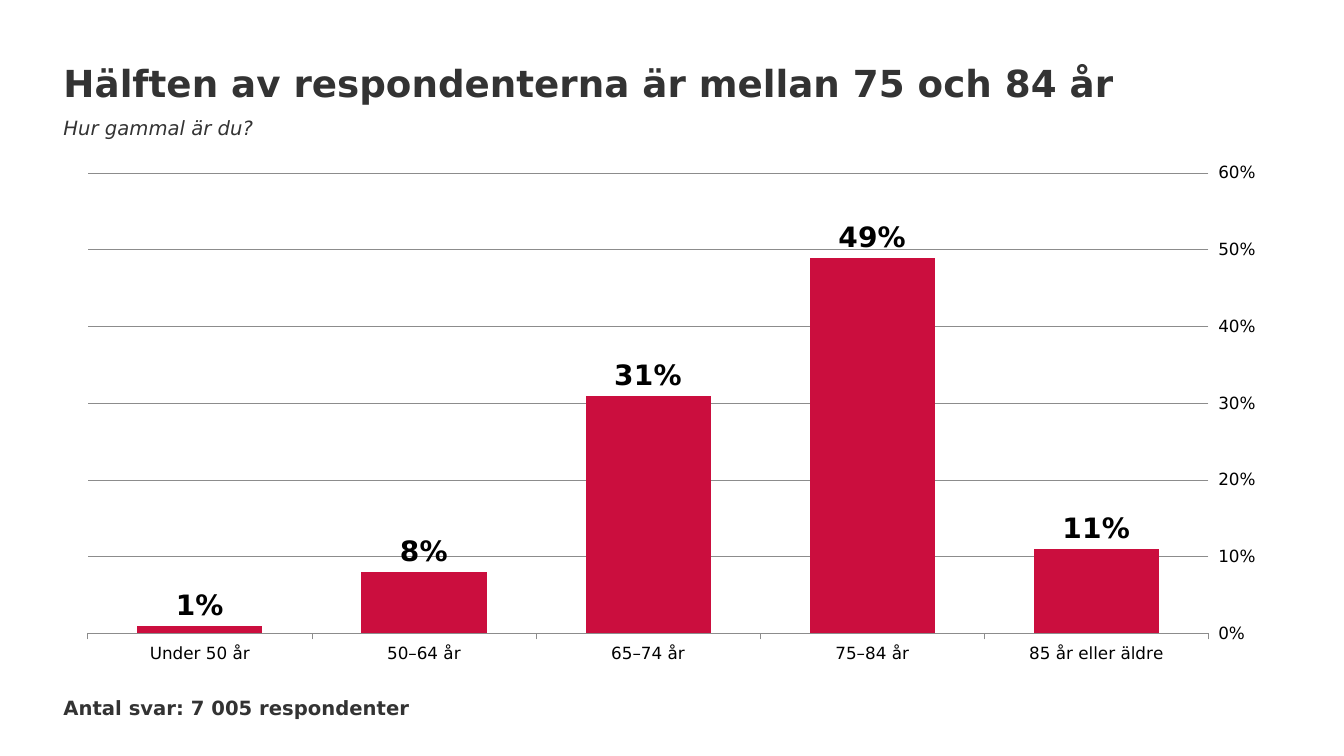
from pptx import Presentation
from pptx import util as u
from pptx.chart import data as cd
from pptx.dml import color as col
from pptx.enum import chart as ch, text as tx

FONT = "DejaVu Sans"
INK, BLACK, GREY, RED = "333333", "000000", "8C8C8C", "CB0E3E"
LEFT, WIDTH = u.Cm(1.6), u.Cm(30.66)
AGES = {
    "Under 50 år": 0.01,
    "50–64 år": 0.08,
    "65–74 år": 0.31,
    "75–84 år": 0.49,
    "85 år eller äldre": 0.11,
}


def rgb(code):
    return col.RGBColor.from_string(code)


def style(font, size, code, bold=False, italic=False):
    font.name = FONT
    font.size = u.Pt(size)
    font.bold = bold
    font.italic = italic
    font.color.rgb = rgb(code)


def fill_text(shape, words, size, bold=False, italic=False):
    """Put one line of left-aligned text in a box without margins."""
    frame = shape.text_frame
    frame.text = words
    frame.word_wrap = True
    frame.auto_size = tx.MSO_AUTO_SIZE.NONE
    frame.vertical_anchor = tx.MSO_ANCHOR.TOP
    frame.margin_left = frame.margin_right = 0
    frame.margin_top = frame.margin_bottom = 0
    line = frame.paragraphs[0]
    line.alignment = tx.PP_ALIGN.LEFT
    style(line.runs[0].font, size, INK, bold, italic)


def add_title(slide, words):
    title = slide.shapes.title
    title.left, title.top = LEFT, u.Cm(1.52)
    title.width, title.height = WIDTH, u.Cm(1.14)
    fill_text(title, words, 26.6, bold=True)


def add_note(slide, words, top, width, **look):
    box = slide.shapes.add_textbox(LEFT, top, width, u.Cm(0.6))
    fill_text(box, words, 14, **look)


def thin(line):
    line.color.rgb = rgb(GREY)
    line.width = u.Pt(0.5)


def add_bars(slide):
    data = cd.CategoryChartData(number_format="0%")
    data.categories = list(AGES)
    data.add_series("Series 1", list(AGES.values()))
    chart = slide.shapes.add_chart(
        ch.XL_CHART_TYPE.COLUMN_CLUSTERED,
        LEFT, u.Cm(3.85), WIDTH, u.Cm(13.13), data).chart
    chart.has_legend = False
    chart.has_title = False
    style(chart.font, 12, BLACK)

    ages, share = chart.category_axis, chart.value_axis
    for axis in (ages, share):
        axis.major_tick_mark = ch.XL_TICK_MARK.OUTSIDE
        style(axis.tick_labels.font, 12, BLACK)
    ages.tick_label_position = ch.XL_TICK_LABEL_POSITION.LOW
    share.tick_label_position = ch.XL_TICK_LABEL_POSITION.HIGH
    thin(ages.format.line)
    share.minimum_scale, share.maximum_scale = 0, 0.6
    share.major_unit = 0.1
    share.tick_labels.number_format = "0%"
    share.tick_labels.number_format_is_linked = False
    share.format.line.fill.background()
    thin(share.major_gridlines.format.line)

    plot = chart.plots[0]
    plot.gap_width = 79
    plot.vary_by_categories = False
    bars = plot.series[0]
    bars.format.fill.solid()
    bars.format.fill.fore_color.rgb = rgb(RED)
    tags = bars.data_labels
    tags.show_value = True
    tags.position = ch.XL_LABEL_POSITION.OUTSIDE_END
    tags.number_format = "0%"
    tags.number_format_is_linked = False
    style(tags.font, 20, BLACK, bold=True)


def main():
    deck = Presentation()
    deck.slide_width, deck.slide_height = u.Cm(33.87), u.Cm(19.05)
    slide = deck.slides.add_slide(deck.slide_layouts.get_by_name("Title Only"))
    add_bars(slide)
    add_note(slide, "Antal svar: 7 005 respondenter", u.Cm(17.53), u.Cm(9.96),
             bold=True)
    add_note(slide, "Hur gammal är du?", u.Cm(2.92), WIDTH, italic=True)
    add_title(slide, "Hälften av respondenterna är mellan 75 och 84 år")
    deck.save("out.pptx")


if __name__ == "__main__":
    main()
